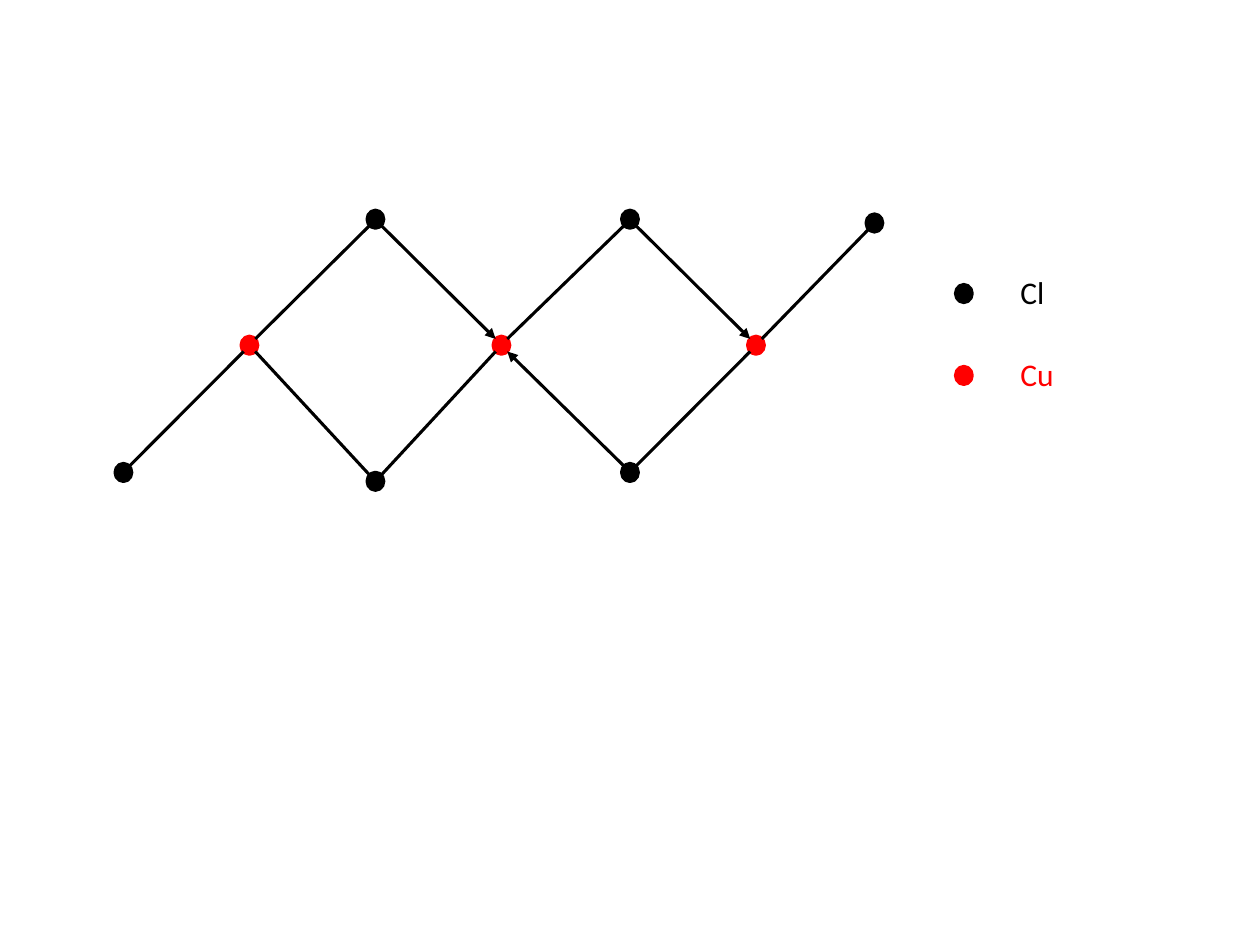
import math
import pptx
import pptx.util
import pptx.dml.color
import pptx.enum.shapes
import pptx.enum.text
import pptx.oxml.ns
import pptx.oxml.xmlchemy

Inches, Pt = pptx.util.Inches, pptx.util.Pt
RGB = pptx.dml.color.RGBColor.from_string
make = pptx.oxml.xmlchemy.OxmlElement

# Content: atom centres by name, in inches
ATOMS = {
    "Cu": {"cu1": (1.98, 2.74), "cu2": (3.98, 2.74), "cu3": (6, 2.74)},
    "Cl": {"start": (0.98, 3.75), "top1": (2.98, 1.74), "low1": (2.98, 3.82),
           "top2": (5, 1.74), "low2": (5, 3.75), "end": (6.94, 1.77)},
}
BONDS = [("cu1", "start"), ("cu1", "top1"), ("cu1", "low1"),
         ("cu2", "low1"), ("cu2", "top2"),
         ("cu3", "low2"), ("cu3", "end")]
ARROWS = [("top1", "cu2"), ("low2", "cu2"), ("top2", "cu3")]
LEGEND = [("Cl", 2.33), ("Cu", 2.98)]

THEME = {"Cl": RGB("000000"), "Cu": RGB("FF0000"), "bond": RGB("000000"),
         "font": "Calibri", "size": Pt(18), "edge": Pt(2), "line": Pt(1.75)}
WIDE, HIGH = 0.13, 0.14
KEY_X, LABEL_X = 7.65, 8

deck = pptx.Presentation()
deck.slide_width, deck.slide_height = Inches(10), Inches(7.5)
slide = deck.slides.add_slide(deck.slide_layouts[6])
shapes = slide.shapes


def add_atom(kind, x, y):
    dot = shapes.add_shape(pptx.enum.shapes.MSO_SHAPE.OVAL,
                           Inches(x - WIDE / 2), Inches(y - HIGH / 2),
                           Inches(WIDE), Inches(HIGH))
    dot.shadow.inherit = False
    dot.fill.solid()
    dot.fill.fore_color.rgb = dot.line.color.rgb = THEME[kind]
    dot.line.width = THEME["edge"]


def add_bond(start, end, arrow=False):
    # Bonds meet each atom at the diagonal point of its rim
    (x1, y1), (x2, y2) = spots[start], spots[end]
    dx = math.copysign(WIDE / 2 * math.sqrt(0.5), x2 - x1)
    dy = math.copysign(HIGH / 2 * math.sqrt(0.5), y2 - y1)
    bond = shapes.add_connector(pptx.enum.shapes.MSO_CONNECTOR.STRAIGHT,
                                Inches(x1 + dx), Inches(y1 + dy),
                                Inches(x2 - dx), Inches(y2 - dy))
    bond.line.color.rgb = THEME["bond"]
    bond.line.width = THEME["line"]
    props = bond._element.spPr
    props.append(make("a:effectLst"))
    if arrow:
        tip = make("a:tailEnd")
        tip.set("type", "triangle")
        props.find(pptx.oxml.ns.qn("a:ln")).append(tip)


def add_label(kind, y):
    box = shapes.add_textbox(Inches(LABEL_X), Inches(y - 0.21),
                             Inches(0.92), Inches(0.42))
    frame = box.text_frame
    frame.word_wrap = True
    frame.auto_size = pptx.enum.text.MSO_AUTO_SIZE.SHAPE_TO_FIT_TEXT
    frame.text = kind
    font = frame.paragraphs[0].font
    font.name, font.size = THEME["font"], THEME["size"]
    font.color.rgb = THEME[kind]


# Chain of atoms and bonds
spots = {}
for kind, group in ATOMS.items():
    spots.update(group)
    for x, y in group.values():
        add_atom(kind, x, y)
for pair in BONDS:
    add_bond(*pair)
for pair in ARROWS:
    add_bond(*pair, arrow=True)

# Legend
for kind, y in LEGEND:
    add_atom(kind, KEY_X, y)
    add_label(kind, y)

deck.save("out.pptx")
